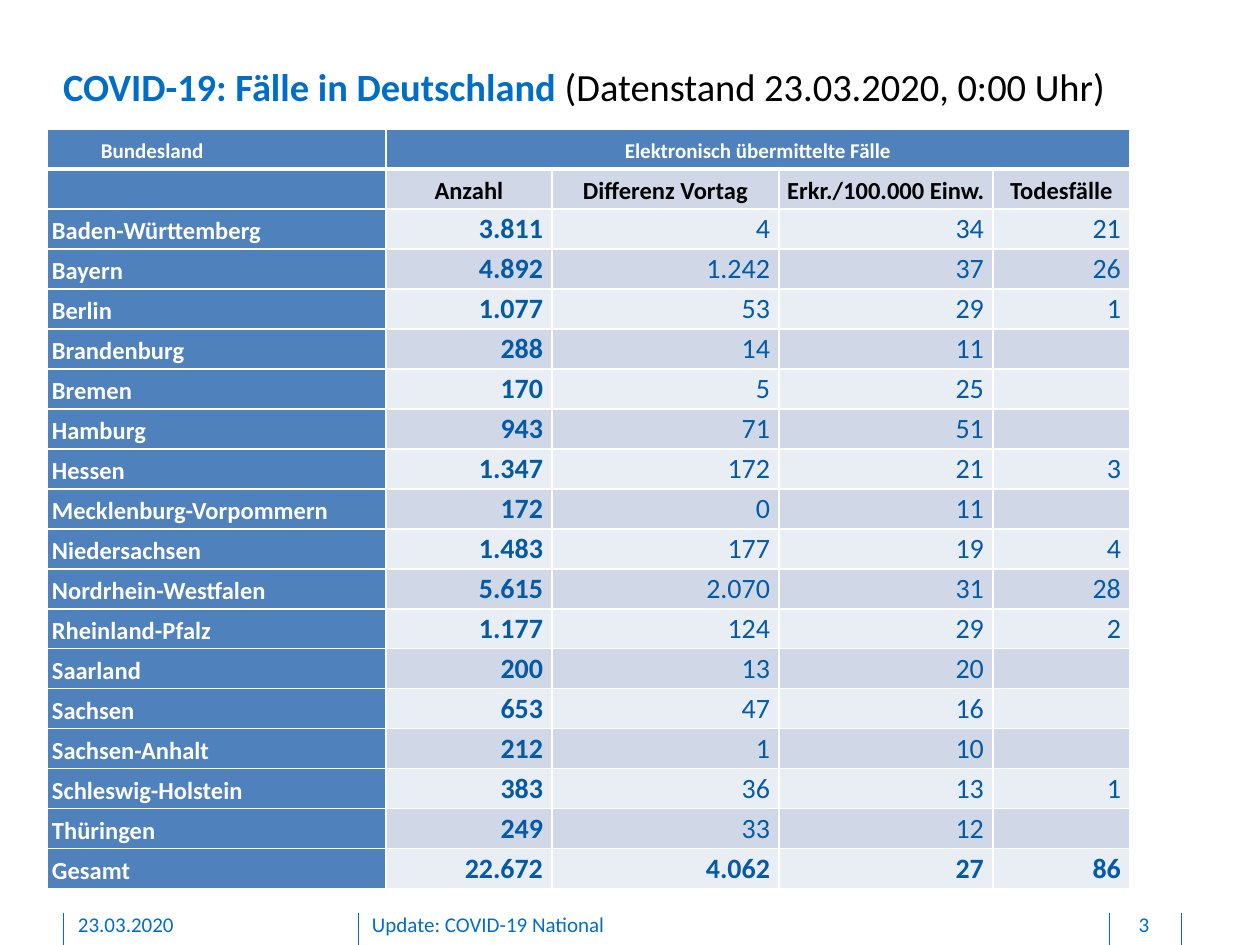
from lxml import etree
from pptx import Presentation
from pptx.dml.color import RGBColor
from pptx.enum import shapes, text
from pptx.oxml.ns import qn
from pptx.util import Emu, Pt

PX = 914400 / 126


class Theme:
    font = "Calibri"
    blue, ink, white, num = "006EC7", "000000", "FFFFFF", "045AA6"
    head, dark, light = "4F81BD", "D0D8E8", "E9EDF4"
    title, cell, label, small = 22, 16, 14, 12


LEFT, MID, RIGHT = (text.PP_ALIGN.LEFT, text.PP_ALIGN.CENTER,
                    text.PP_ALIGN.RIGHT)
COLS = [339, 166, 227, 214, 137]
ROW = 40
HEADS = ["Anzahl", "Differenz Vortag", "Erkr./100.000 Einw.", "Todesfälle"]
STATES = [
    ("Baden-Württemberg", "3.811", "4", "34", "21"),
    ("Bayern", "4.892", "1.242", "37", "26"),
    ("Berlin", "1.077", "53", "29", "1"),
    ("Brandenburg", "288", "14", "11", ""),
    ("Bremen", "170", "5", "25", ""),
    ("Hamburg", "943", "71", "51", ""),
    ("Hessen", "1.347", "172", "21", "3"),
    ("Mecklenburg-Vorpommern", "172", "0", "11", ""),
    ("Niedersachsen", "1.483", "177", "19", "4"),
    ("Nordrhein-Westfalen", "5.615", "2.070", "31", "28"),
    ("Rheinland-Pfalz", "1.177", "124", "29", "2"),
    ("Saarland", "200", "13", "20", ""),
    ("Sachsen", "653", "47", "16", ""),
    ("Sachsen-Anhalt", "212", "1", "10", ""),
    ("Schleswig-Holstein", "383", "36", "13", "1"),
    ("Thüringen", "249", "33", "12", ""),
    ("Gesamt", "22.672", "4.062", "27", "86"),
]


def px(n):
    return Emu(round(n * PX))


def assign(obj, vals):
    for key, val in vals.items():
        setattr(obj, key, val)


def write(para, words, size, color, bold=False):
    run = para.add_run()
    run.text = words
    assign(run.font, {"name": Theme.font, "size": Pt(size), "bold": bold})
    run.font.color.rgb = RGBColor.from_string(color)


def frame(slide, box, foot=0):
    body = slide.shapes.add_textbox(*map(px, box)).text_frame
    assign(body, {"word_wrap": True, "margin_left": 0, "margin_right": 0,
                  "margin_top": 0, "margin_bottom": px(foot)})
    return body


def title(slide, box):
    body = frame(slide, box)
    body.auto_size = text.MSO_AUTO_SIZE.SHAPE_TO_FIT_TEXT
    para = body.paragraphs[0]
    write(para, "COVID-19: Fälle in Deutschland ", Theme.title, Theme.blue, True)
    write(para, "(Datenstand 23.03.2020, 0:00 Uhr)", Theme.title, Theme.ink)


def edge(cell, top, bottom):
    # Borders come before the fill in the cell properties
    props = cell._tc.get_or_add_tcPr()
    for side, width in zip("LRTB", (1, 1, top, bottom)):
        line = etree.SubElement(props, qn("a:ln" + side), w=str(Pt(width)))
        fill = etree.SubElement(line, qn("a:solidFill"))
        etree.SubElement(fill, qn("a:srgbClr"), val=Theme.white)


def style(cell, words, fill, size, color, bold, align, pad=5, space=1.15):
    cell.fill.solid()
    cell.fill.fore_color.rgb = RGBColor.from_string(fill)
    assign(cell, {"margin_left": px(pad), "margin_right": px(pad),
                  "margin_top": 0, "margin_bottom": 0,
                  "vertical_anchor": text.MSO_ANCHOR.MIDDLE})
    para = cell.text_frame.paragraphs[0]
    assign(para, {"alignment": align, "line_spacing": space})
    if words:
        write(para, words, size, color, bold)
    else:
        # Keeps an empty cell from stretching its row
        etree.SubElement(para._p, qn("a:endParaRPr"), sz=str(size * 100))


def cases(slide, box):
    rows = [("Bundesland", "Elektronisch übermittelte Fälle", "", "", ""),
            ("", *HEADS), *STATES]
    grid = slide.shapes.add_table(len(rows), len(COLS), *map(px, box)).table
    assign(grid, {"first_row": False, "horz_banding": False})
    for col, wide in zip(grid.columns, COLS):
        col.width = px(wide)
    for r, row in enumerate(rows):
        grid.rows[r].height = px(ROW)
        band = Theme.dark if r % 2 else Theme.light
        for c, words in enumerate(row):
            cell = grid.cell(r, c)
            edge(cell, 3 if r == 1 else 1, 3 if r == 0 else 1)
            if r == 0:
                style(cell, words, Theme.head, Theme.small, Theme.white, True,
                      MID if c else LEFT)
            elif c == 0:
                style(cell, words, Theme.head, Theme.label, Theme.white, True,
                      LEFT)
            elif r == 1:
                style(cell, words, band, Theme.label, Theme.ink, True, MID)
            else:
                bold = c == 1 or r == len(rows) - 1
                style(cell, words, band, Theme.cell, Theme.num, bold, RIGHT,
                      9, 1.0)
    # Indent of the first heading, and the heading over four columns
    first = grid.cell(0, 0).text_frame.paragraphs[0]
    first._p.get_or_add_pPr().set("indent", str(px(49)))
    grid.cell(0, 1).merge(grid.cell(0, 4))


def footer(slide, box):
    x, y, w, h = box
    # Dividers
    for dx in (0, 295, 1046, 1118):
        line = slide.shapes.add_connector(
            shapes.MSO_CONNECTOR.STRAIGHT,
            px(x + dx), px(y + 1), px(x + dx), px(y + h))
        line.line.width = Pt(0.5)
        line.line.color.rgb = RGBColor.from_string(Theme.blue)
        etree.SubElement(line._element.spPr, qn("a:effectLst"))
    # Date, topic and page number
    for dx, wide, words, align in (
            (15, 256, "23.03.2020", LEFT),
            (309, 714, "Update: COVID-19 National", LEFT),
            (1047, 68, "3", MID)):
        para = frame(slide, (x + dx, y, wide, 26), 6).paragraphs[0]
        para.alignment = align
        write(para, words, Theme.small, Theme.blue)


def main():
    deck = Presentation()
    assign(deck, {"slide_width": px(1260), "slide_height": px(945)})
    slide = deck.slides.add_slide(deck.slide_layouts[6])
    title(slide, (63, 63, 1115, 47))
    cases(slide, (47, 129, sum(COLS), ROW * (len(STATES) + 2)))
    footer(slide, (63, 912, 1118, 33))
    deck.save("out.pptx")


if __name__ == "__main__":
    main()
